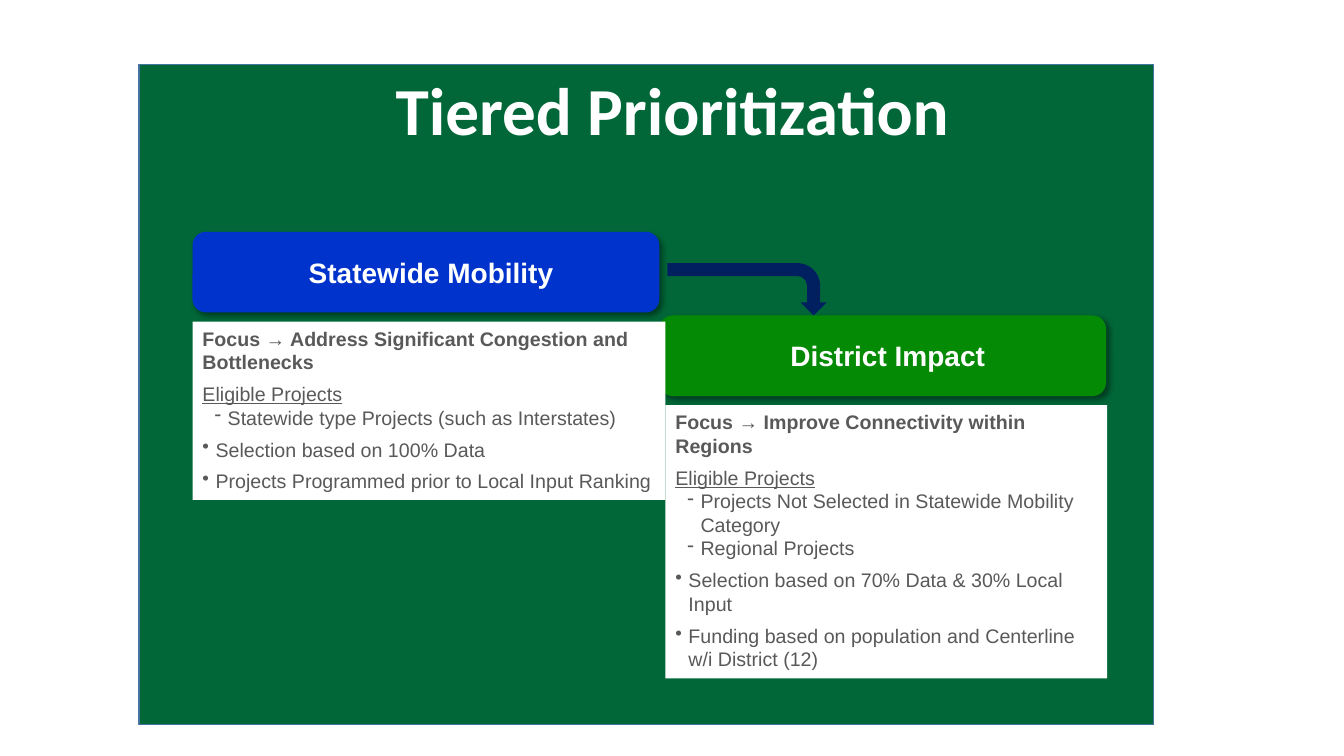
from dataclasses import dataclass

from pptx import Presentation
from pptx.dml.color import RGBColor
from pptx.enum.shapes import MSO_SHAPE as Preset
from pptx.enum.text import MSO_ANCHOR as Anchor, MSO_AUTO_SIZE as AutoSize, PP_ALIGN as Align
from pptx.oxml import parse_xml
from pptx.oxml.ns import nsdecls
from pptx.util import Inches, Pt


@dataclass(frozen=True)
class Theme:
    panel: str = "016738"
    panel_edge: str = "43739E"
    statewide: str = "0033CC"
    district: str = "058A05"
    arrow: str = "002060"
    white: str = "FFFFFF"
    body: str = "595959"
    title_font: str = "Calibri"
    body_font: str = "Arial"
    title_size: int = 48
    header_size: int = 20
    body_size: int = 14


THEME = Theme()
HEADER_HEIGHT = 0.8
CARD_OFFSET = 0.89  # from the top of a header to the top of its card

# Left indent in inches, space before in points, bullet character
LEVELS = {
    "plain": (0, 6, None),
    "dash": (0.25, 0, "-"),
    "bullet": (0.13, 6, "•"),
}
HANGING = 0.13

STATEWIDE_LINES = [
    ("Statewide type Projects (such as Interstates)", "dash"),
    ("Selection based on 100% Data", "bullet"),
    ("Projects Programmed prior to Local Input Ranking", "bullet"),
]
DISTRICT_LINES = [
    ("Projects Not Selected in Statewide Mobility Category", "dash"),
    ("Regional Projects", "dash"),
    ("Selection based on 70% Data & 30% Local Input", "bullet"),
    ("Funding based on population and Centerline w/i District (12)", "bullet"),
]


def add_box(slide, preset, box, fill, line=None):
    shape = slide.shapes.add_shape(preset, *map(Inches, box))
    shape.shadow.inherit = False
    shape.fill.solid()
    shape.fill.fore_color.rgb = RGBColor.from_string(fill)
    if line:
        shape.line.color.rgb = RGBColor.from_string(line)
        shape.line.width = Pt(1)
    else:
        shape.line.fill.background()
    return shape


def add_soft_shadow(shape):
    properties = shape.element.spPr
    for effects in properties.findall("{*}effectLst"):
        properties.remove(effects)
    properties.append(parse_xml(
        f'<a:effectLst {nsdecls("a")}>'
        f'<a:outerShdw blurRad="{Pt(4)}" dist="{Pt(3)}" dir="2700000" algn="tl" rotWithShape="0">'
        '<a:srgbClr val="000000"><a:alpha val="40000"/></a:srgbClr>'
        '</a:outerShdw></a:effectLst>'))


def write(paragraph, text, *, size, color, font=THEME.body_font, bold=False,
          underline=False, align=Align.LEFT, level="plain", first=False, spacing=None):
    indent, before, bullet = LEVELS[level]
    if bullet:
        properties = paragraph._p.get_or_add_pPr()
        properties.set("marL", str(Inches(indent)))
        properties.set("indent", str(-Inches(HANGING)))
        properties.append(parse_xml(f'<a:buChar {nsdecls("a")} char="{bullet}"/>'))
    paragraph.alignment = align
    paragraph.space_before = Pt(0 if first else before)
    if spacing:
        paragraph.line_spacing = spacing
    run = paragraph.add_run()
    run.text = text
    run.font.name = font
    run.font.size = Pt(size)
    run.font.bold = bold
    run.font.underline = underline
    run.font.color.rgb = RGBColor.from_string(color)


def add_title(slide, box, text):
    frame = slide.shapes.add_textbox(*map(Inches, box)).text_frame
    frame.word_wrap = True
    frame.vertical_anchor = Anchor.MIDDLE
    write(frame.paragraphs[0], text, size=THEME.title_size, color=THEME.white,
          font=THEME.title_font, bold=True, align=Align.CENTER, first=True, spacing=0.9)


def add_header(slide, box, text, fill):
    shape = add_box(slide, Preset.ROUNDED_RECTANGLE, box, fill)
    add_soft_shadow(shape)
    frame = shape.text_frame
    frame.word_wrap = True
    frame.margin_left = Inches(0.2)
    frame.vertical_anchor = Anchor.MIDDLE
    write(frame.paragraphs[0], text, size=THEME.header_size, color=THEME.white,
          bold=True, align=Align.CENTER, first=True)


def add_card(slide, box, focus, lines):
    """Add a white card with its focus, the eligible projects and the rules."""
    frame = add_box(slide, Preset.RECTANGLE, box, THEME.white).text_frame
    frame.word_wrap = True
    frame.auto_size = AutoSize.SHAPE_TO_FIT_TEXT
    frame.vertical_anchor = Anchor.TOP
    style = {"size": THEME.body_size, "color": THEME.body}
    write(frame.paragraphs[0], f"Focus → {focus}", bold=True, first=True, **style)
    write(frame.add_paragraph(), "Eligible Projects", underline=True, **style)
    for text, level in lines:
        write(frame.add_paragraph(), text, level=level, **style)


def add_arrow(slide, box):
    """Add an arrow that runs right and bends down inside the box."""
    left, top, width, height = box
    shift = (width - height) / 2
    upright = (left + shift, top - shift, height, width)
    add_box(slide, Preset.BENT_ARROW, upright, THEME.arrow).rotation = 90


def build_tiers(slide, box):
    left, top, width, height = box
    add_box(slide, Preset.RECTANGLE, box, THEME.panel, THEME.panel_edge)
    statewide_left, statewide_top = left + 0.53, top + 1.66
    district_left, district_top = left + 5.16, top + 2.49

    add_header(slide, (statewide_left, statewide_top, 4.63, HEADER_HEIGHT),
               "Statewide Mobility", THEME.statewide)
    add_header(slide, (district_left, district_top, 4.43, HEADER_HEIGHT),
               "District Impact", THEME.district)
    add_arrow(slide, (district_left + 0.08, district_top - 0.52, 1.58, 0.52))
    add_card(slide, (statewide_left, statewide_top + CARD_OFFSET, 4.69, 1.77),
             "Address Significant Congestion and Bottlenecks", STATEWIDE_LINES)
    add_card(slide, (district_left + 0.06, district_top + CARD_OFFSET, 4.38, 2.71),
             "Improve Connectivity within Regions", DISTRICT_LINES)


def main():
    presentation = Presentation()
    presentation.slide_width = Inches(13.33)
    presentation.slide_height = Inches(7.5)
    slide = presentation.slides.add_slide(presentation.slide_layouts[6])
    build_tiers(slide, (1.38, 0.64, 10.06, 6.55))
    add_title(slide, (0.92, 0.4, 11.5, 1.45), "Tiered Prioritization")
    presentation.save("out.pptx")


if __name__ == "__main__":
    main()
